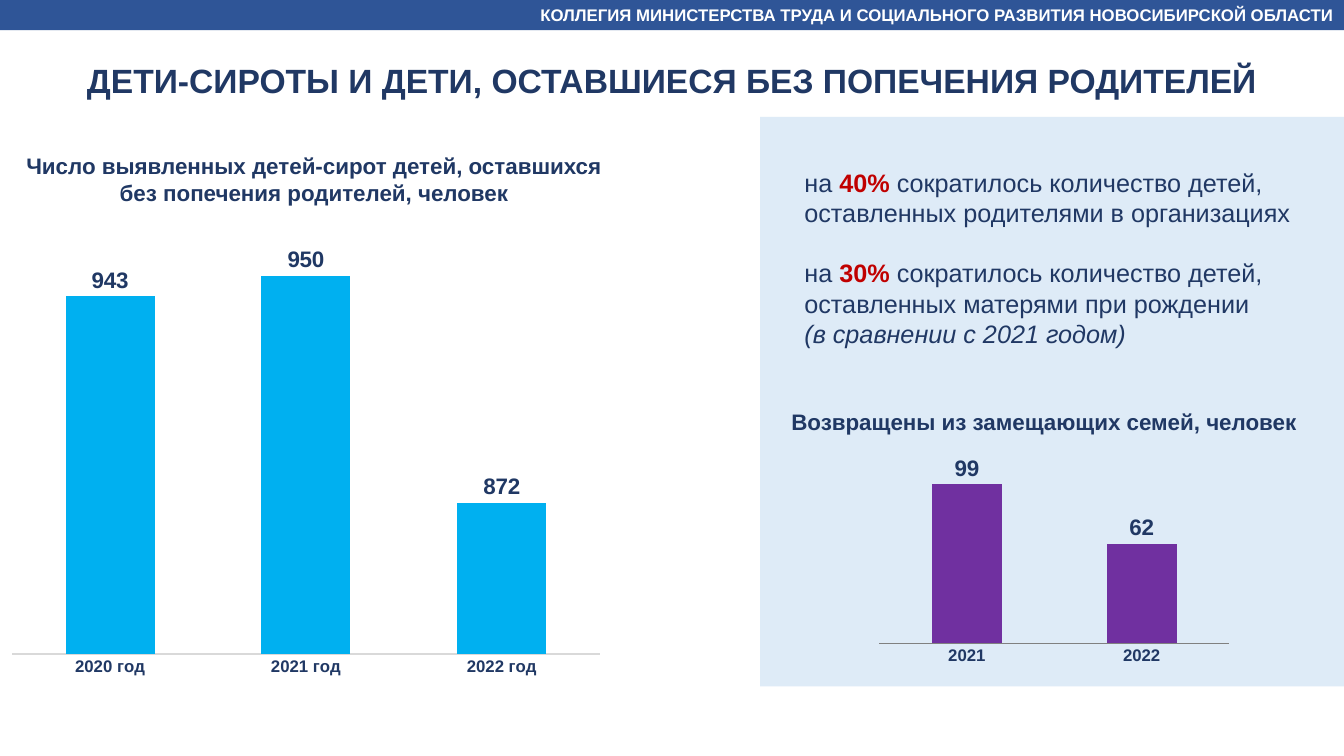
from lxml import etree
from pptx import Presentation
from pptx.chart.data import CategoryChartData
from pptx.dml.color import RGBColor
from pptx.enum.chart import XL_CHART_TYPE, XL_LABEL_POSITION, XL_TICK_MARK
from pptx.enum.shapes import MSO_SHAPE
from pptx.enum.text import MSO_ANCHOR, MSO_AUTO_SIZE, PP_ALIGN
from pptx.oxml.ns import qn
from pptx.util import Pt

EMU_PER_PX = 9144  # 100 px to the inch
FONT = "Arial"
NAVY = "203864"
RED = "C00000"
WHITE = "FFFFFF"


def px(length):
    return length * EMU_PER_PX


def color(value):
    return RGBColor.from_string(value)


def style_font(font, size, value=NAVY, bold=False, italic=False):
    font.name = FONT
    font.size = Pt(size)
    font.bold = bold
    font.italic = italic
    font.color.rgb = color(value)


def place(shape, box):
    shape.left, shape.top, shape.width, shape.height = map(px, box)


def add_panel(slide, box, fill):
    panel = slide.shapes.add_shape(MSO_SHAPE.RECTANGLE, *map(px, box))
    panel.shadow.inherit = False
    panel.fill.solid()
    panel.fill.fore_color.rgb = color(fill)
    panel.line.fill.background()
    return panel


def write_line(shape, text, size, alignment, value=NAVY):
    """Fill a shape with one bold paragraph."""
    text_frame = shape.text_frame
    text_frame.text = text
    text_frame.word_wrap = True
    text_frame.auto_size = MSO_AUTO_SIZE.NONE
    paragraph = text_frame.paragraphs[0]
    paragraph.alignment = alignment
    style_font(paragraph.runs[0].font, size, value, bold=True)
    return paragraph


def add_text_box(slide, box):
    text_box = slide.shapes.add_textbox(*map(px, box))
    text_box.text_frame.word_wrap = True
    return text_box


def add_findings(slide, box, findings, note):
    """Write sentences with a highlighted share, then an italic note."""
    text_frame = add_text_box(slide, box).text_frame
    for index, (share, statement) in enumerate(findings):
        paragraph = text_frame.paragraphs[0]
        if index:
            paragraph = text_frame.add_paragraph()
            paragraph.space_before = Pt(21.5)
        for text, value, bold in (("на ", NAVY, False), (share, RED, True),
                                  (statement, NAVY, False)):
            run = paragraph.add_run()
            run.text = text
            style_font(run.font, 18, value, bold)
    paragraph = text_frame.add_paragraph()
    paragraph.text = note
    style_font(paragraph.runs[0].font, 18, italic=True)


def set_plot_layout(chart, fractions):
    """Fix the inner plot area as fractions of the chart (x, y, w, h)."""
    plot_area = chart._chartSpace.chart.plotArea
    for old_layout in plot_area.findall(qn("c:layout")):
        plot_area.remove(old_layout)
    layout = etree.Element(qn("c:layout"))
    manual = etree.SubElement(layout, qn("c:manualLayout"))
    settings = [("layoutTarget", "inner"), ("xMode", "edge"), ("yMode", "edge")]
    settings += zip("xywh", fractions)
    for name, value in settings:
        etree.SubElement(manual, qn(f"c:{name}")).set("val", str(value))
    plot_area.insert(0, layout)


def add_column_chart(slide, box, values, fill, gap, axis_color, limits, layout):
    data = CategoryChartData()
    data.categories = list(values)
    data.add_series("Человек", values.values())
    chart = slide.shapes.add_chart(
        XL_CHART_TYPE.COLUMN_CLUSTERED, *map(px, box), data).chart
    chart.has_legend = False
    chart.has_title = False
    style_font(chart.font, 10)

    category_axis = chart.category_axis
    category_axis.major_tick_mark = XL_TICK_MARK.NONE
    category_axis.format.line.color.rgb = color(axis_color)
    category_axis.format.line.width = Pt(0.75)
    style_font(category_axis.tick_labels.font, 12, bold=True)

    value_axis = chart.value_axis
    value_axis.minimum_scale, value_axis.maximum_scale = limits
    value_axis.has_major_gridlines = False
    value_axis.visible = False

    plot = chart.plots[0]
    plot.vary_by_categories = False
    plot.gap_width = gap
    plot.overlap = -27
    column_fill = plot.series[0].format.fill
    column_fill.solid()
    column_fill.fore_color.rgb = color(fill)
    plot.has_data_labels = True
    labels = plot.data_labels
    labels.show_value = True
    labels.position = XL_LABEL_POSITION.OUTSIDE_END
    style_font(labels.font, 16, bold=True)
    set_plot_layout(chart, layout)


def main():
    presentation = Presentation()
    presentation.slide_width = px(1333)
    presentation.slide_height = px(750)
    slide = presentation.slides.add_slide(presentation.slide_layouts[5])

    add_panel(slide, (754, 116, 579, 565), "DEEBF7")
    header = add_panel(slide, (0, 0, 1333, 30), "2F5597")
    header.text_frame.vertical_anchor = MSO_ANCHOR.MIDDLE
    write_line(header, "КОЛЛЕГИЯ МИНИСТЕРСТВА ТРУДА И СОЦИАЛЬНОГО РАЗВИТИЯ "
               "НОВОСИБИРСКОЙ ОБЛАСТИ", 12, PP_ALIGN.RIGHT, WHITE)

    title = slide.shapes.title
    place(title, (0, 54, 1333, 50))
    write_line(title, "ДЕТИ-СИРОТЫ И ДЕТИ, ОСТАВШИЕСЯ БЕЗ ПОПЕЧЕНИЯ РОДИТЕЛЕЙ",
               24, PP_ALIGN.CENTER)

    write_line(add_text_box(slide, (15, 146, 593, 64)),
               "Число выявленных детей-сирот детей, оставшихся "
               "без попечения родителей, человек", 16, PP_ALIGN.CENTER)
    add_column_chart(slide, (0, 236, 607, 444),
                     {"2020 год": 943, "2021 год": 950, "2022 год": 872},
                     "00B0F0", 120, "D9D9D9", (820, 960), (0.02, 0.02, 0.96, 0.91))

    add_findings(
        slide, (788, 161, 504, 192),
        [("40% ", "сократилось количество детей, "
          "оставленных родителями в организациях"),
         ("30% ", "сократилось количество детей, "
          "оставленных матерями при рождении")],
        "(в сравнении с 2021 годом)")

    returned = write_line(add_text_box(slide, (775, 398, 549, 39)),
                          "Возвращены из замещающих семей, человек",
                          16, PP_ALIGN.JUSTIFY)
    returned.line_spacing = 1.07
    add_column_chart(slide, (861, 435, 377, 245), {"2021": 99, "2022": 62},
                     "7030A0", 149, "808080", (0, 120), (0.03, 0.05, 0.92, 0.78))

    presentation.save("out.pptx")


if __name__ == "__main__":
    main()
